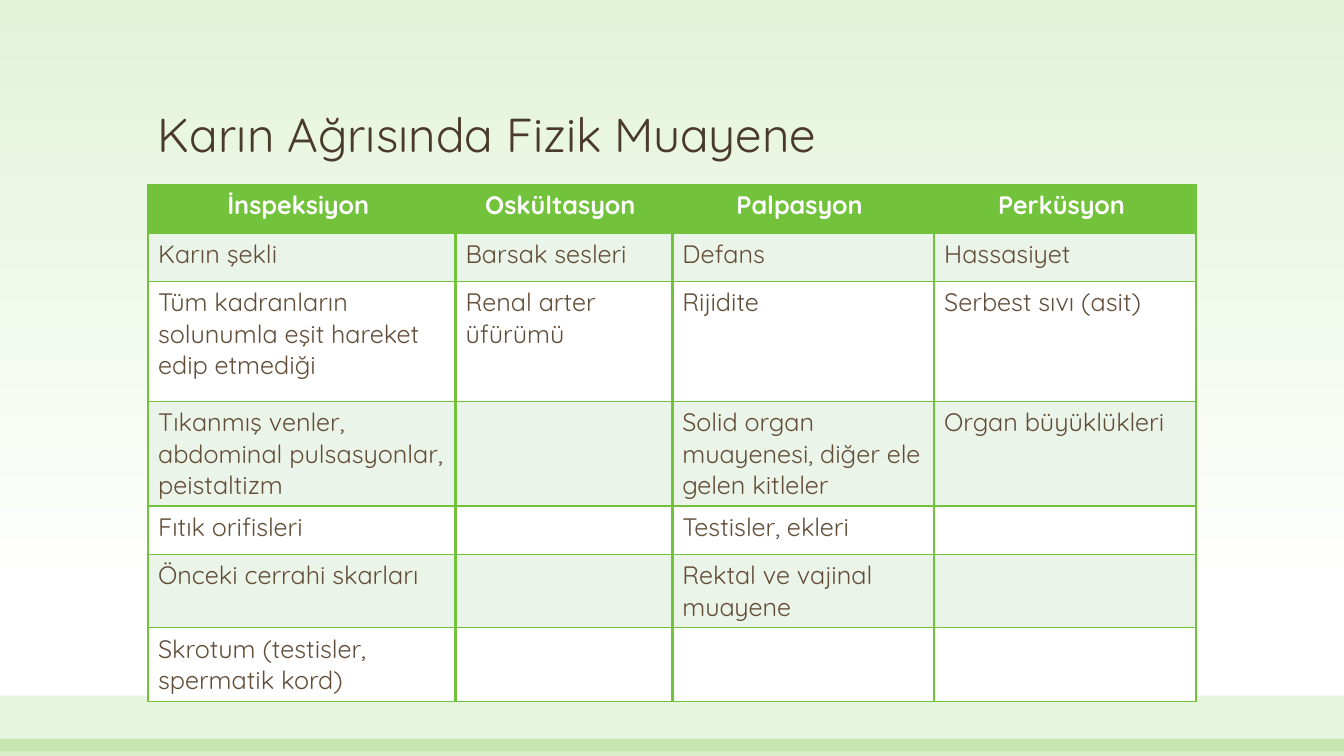
from lxml import etree
from pptx import Presentation
from pptx.dml.color import RGBColor
from pptx.enum.shapes import MSO_SHAPE
from pptx.enum.text import MSO_ANCHOR, PP_ALIGN
from pptx.oxml.ns import qn
from pptx.util import Cm, Pt

RECT = MSO_SHAPE.RECTANGLE
BOTTOM = MSO_ANCHOR.BOTTOM
LEFT, CENTER = PP_ALIGN.LEFT, PP_ALIGN.CENTER

COLORS = {
    "green": "72C23C",
    "mint": "E3F3D8",
    "band": "EBF4E8",
    "white": "FFFFFF",
    "title": "4A3A2A",
    "body": "624D38",
}
FONT = "Quicksand"
SLIDE_W, SLIDE_H = 33.87, 19.05
MARGIN, CONTENT_W = 3.73, 26.42

COL_WIDTHS = [7.75, 5.46, 6.6, 6.6]
ROW_HEIGHTS = [1.22, 1.22, 3.02, 2.64, 1.22, 1.85, 1.85]
EXAM_ROWS = [
    ["İnspeksiyon ", "Oskültasyon ", "Palpasyon ", "Perküsyon "],
    ["Karın şekli", "Barsak sesleri", "Defans", "Hassasiyet"],
    ["Tüm kadranların solunumla eşit hareket edip etmediği",
     "Renal arter üfürümü", "Rijidite", "Serbest sıvı (asit)"],
    ["Tıkanmış venler, abdominal pulsasyonlar, peistaltizm", "",
     "Solid organ muayenesi, diğer ele gelen kitleler", "Organ büyüklükleri"],
    ["Fıtık orifisleri", "", "Testisler, ekleri", ""],
    ["Önceki cerrahi skarları", "", "Rektal ve vajinal muayene", ""],
    ["Skrotum (testisler, spermatik kord)", "", "", ""],
]


def rgb(name):
    return RGBColor.from_string(COLORS[name])


class SlideBuilder:
    def __init__(self, prs):
        self.s = prs.slides.add_slide(prs.slide_layouts[6])

    def background(self, top, bottom, end):
        fill = self.s.background.fill
        fill.gradient()
        fill.gradient_angle = 270
        for stop, color, position in zip(fill.gradient_stops, (top, bottom), (0, end)):
            stop.color.rgb = rgb(color)
            stop.position = position

    def bar(self, top, height, color, opacity):
        sp = self.s.shapes.add_shape(RECT, 0, Cm(top), Cm(SLIDE_W), Cm(height))
        sp.shadow.inherit = False
        sp.line.fill.background()
        sp.fill.solid()
        sp.fill.fore_color.rgb = rgb(color)
        clr = sp._element.spPr.find(qn("a:solidFill"))[0]
        etree.SubElement(clr, qn("a:alpha"), val=str(opacity * 1000))

    def run(self, p, text, size, color, bold=False):
        r = p.add_run()
        r.text = text
        r.font.name = FONT
        r.font.size = Pt(size)
        r.font.bold = bold
        r.font.color.rgb = rgb(color)

    def title(self, text, top, height):
        sp = self.s.shapes.add_textbox(Cm(MARGIN), Cm(top), Cm(CONTENT_W), Cm(height))
        tf = sp.text_frame
        tf.word_wrap = True
        tf.vertical_anchor = BOTTOM
        p = tf.paragraphs[0]
        p.line_spacing = 0.9
        self.run(p, text, 34, "title")

    def border(self, cell, side, width):
        ln = etree.SubElement(cell._tc.get_or_add_tcPr(), qn(f"a:ln{side}"),
                              w=str(Pt(width)))
        fill = etree.SubElement(ln, qn("a:solidFill"))
        etree.SubElement(fill, qn("a:srgbClr"), val=COLORS["green"])

    def cell(self, cell, text, header, fill, widths):
        for side, width in widths.items():
            self.border(cell, side, width)
        cell.fill.solid()
        cell.fill.fore_color.rgb = rgb(fill)
        if text:
            p = cell.text_frame.paragraphs[0]
            p.alignment = CENTER if header else LEFT
            self.run(p, text, 18, "white" if header else "body", header)

    def table(self, rows, top):
        n_rows, n_cols = len(rows), len(rows[0])
        frame = self.s.shapes.add_table(n_rows, n_cols, Cm(MARGIN), Cm(top),
                                        Cm(CONTENT_W), Cm(sum(ROW_HEIGHTS)))
        table = frame.table
        for column, width in zip(table.columns, COL_WIDTHS):
            column.width = Cm(width)
        for i, texts in enumerate(rows):
            table.rows[i].height = Cm(ROW_HEIGHTS[i])
            fill = "green" if i == 0 else "band" if i % 2 else "white"
            for j, text in enumerate(texts):
                widths = {"L": 2.25 if j else 1,
                          "R": 2.25 if j < n_cols - 1 else 1,
                          "T": 1, "B": 1}
                self.cell(table.cell(i, j), text, i == 0, fill, widths)


def main():
    prs = Presentation()
    prs.slide_width, prs.slide_height = Cm(SLIDE_W), Cm(SLIDE_H)
    slide = SlideBuilder(prs)
    slide.background("mint", "white", 0.79)
    slide.bar(17.53, 1.4, "green", 17)
    slide.bar(18.62, 0.43, "green", 28)
    slide.title("Karın Ağrısında Fizik Muayene", 1.22, 3.02)
    slide.table(EXAM_ROWS, 4.65)
    prs.save("out.pptx")


if __name__ == "__main__":
    main()
